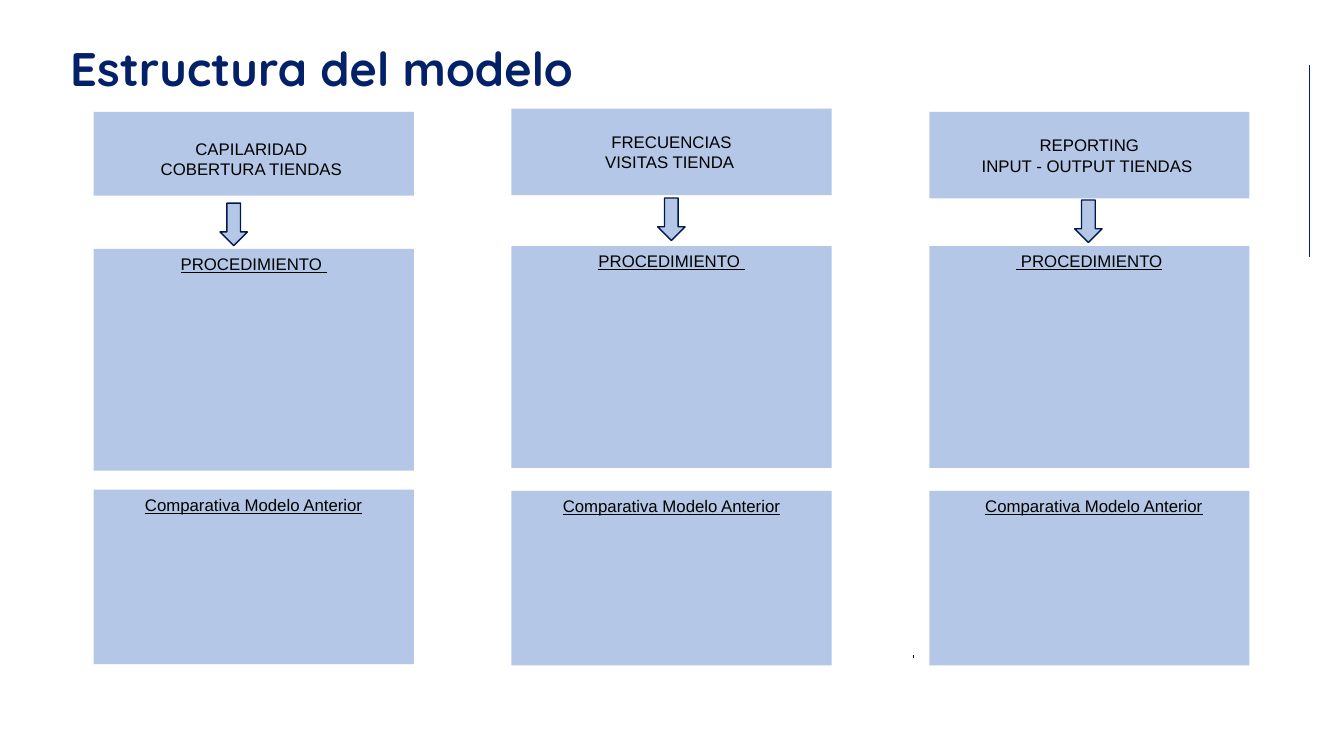
from lxml import etree
from pptx import Presentation
from pptx.dml.color import RGBColor
from pptx.enum.shapes import MSO_CONNECTOR, MSO_SHAPE
from pptx.enum.text import MSO_ANCHOR, PP_ALIGN
from pptx.oxml.ns import qn
from pptx.util import Cm, Pt

RECTANGLE, DOWN_ARROW = MSO_SHAPE.RECTANGLE, MSO_SHAPE.DOWN_ARROW
STRAIGHT = MSO_CONNECTOR.STRAIGHT
TOP, MIDDLE = MSO_ANCHOR.TOP, MSO_ANCHOR.MIDDLE
LEFT, CENTER = PP_ALIGN.LEFT, PP_ALIGN.CENTER

COLORS = {"panel": "B4C7E7", "title": "022169", "outline": "01184E", "text": "000000"}
TITLE = "Estructura del modelo"
COMPARISON = "Comparativa Modelo Anterior"
COLUMNS = [
    {"heading": ["CAPILARIDAD ", "COBERTURA TIENDAS "], "procedure": "PROCEDIMIENTO ",
     "tops": (2.82, 6.27, 12.34), "heading_height": 2.11, "heading_inset": 0.36,
     "comparison_inset": 0.25, "arrow": (5.89, 5.12)},
    {"heading": ["FRECUENCIAS", "VISITAS TIENDA "], "procedure": "PROCEDIMIENTO ",
     "tops": (2.74, 6.2, 12.37), "heading_height": 2.18, "heading_inset": 0.13,
     "comparison_inset": 0.25, "arrow": (16.92, 4.99)},
    {"heading": ["REPORTING", "INPUT - OUTPUT TIENDAS "], "procedure": " PROCEDIMIENTO",
     "tops": (2.82, 6.2, 12.37), "heading_height": 2.18, "heading_inset": 0.13,
     "comparison_inset": 0.48, "arrow": (27.43, 5.04)},
]
RULES = [(32.99, 1.65, 6.48, "title", 0.5), (23.01, 16.51, 16.59, "text", 0.75)]
FIRST_LEFT, COLUMN_STEP, PANEL_WIDTH = 2.36, 10.53, 8.07
PROCEDURE_HEIGHT, COMPARISON_HEIGHT = 5.59, 4.4
ARROW_WIDTH, ARROW_HEIGHT = 0.69, 1.07


def color(name):
    return RGBColor.from_string(COLORS[name])


def write_text(shape, lines, size=12, font="Arial", ink="text", bold=False, underline=False,
               align=CENTER, anchor=TOP, spacing=1.0, left_inset=0.25, top_inset=0.13):
    frame = shape.text_frame
    frame.word_wrap = True
    frame.vertical_anchor = anchor
    frame.margin_left, frame.margin_top = Cm(left_inset), Cm(top_inset)
    for index, line in enumerate(lines):
        paragraph = frame.paragraphs[0] if index == 0 else frame.add_paragraph()
        paragraph.alignment, paragraph.line_spacing = align, spacing
        run = paragraph.add_run()
        run.text = line
        run.font.name, run.font.size = font, Pt(size)
        run.font.bold, run.font.underline = bold, underline
        run.font.color.rgb = color(ink)


def add_filled(slide, kind, left, top, width, height):
    shape = slide.shapes.add_shape(kind, Cm(left), Cm(top), Cm(width), Cm(height))
    shape.shadow.inherit = False
    shape.fill.solid()
    shape.fill.fore_color.rgb = color("panel")
    shape.line.fill.background()
    return shape


def add_rule(slide, x, top, bottom, ink, weight):
    rule = slide.shapes.add_connector(STRAIGHT, Cm(x), Cm(top), Cm(x), Cm(bottom))
    rule.line.color.rgb = color(ink)
    rule.line.width = Pt(weight)
    etree.SubElement(rule._element.spPr, qn("a:effectLst"))


def add_column(slide, left, column):
    heading_top, procedure_top, comparison_top = column["tops"]
    heading = add_filled(slide, RECTANGLE, left, heading_top, PANEL_WIDTH, column["heading_height"])
    write_text(heading, column["heading"], anchor=MIDDLE, top_inset=column["heading_inset"])
    procedure = add_filled(slide, RECTANGLE, left, procedure_top, PANEL_WIDTH, PROCEDURE_HEIGHT)
    write_text(procedure, [column["procedure"]], underline=True)
    comparison = add_filled(slide, RECTANGLE, left, comparison_top, PANEL_WIDTH, COMPARISON_HEIGHT)
    write_text(comparison, [COMPARISON], underline=True, left_inset=column["comparison_inset"])
    center, top = column["arrow"]
    arrow = add_filled(slide, DOWN_ARROW, center - ARROW_WIDTH / 2, top, ARROW_WIDTH, ARROW_HEIGHT)
    arrow.line.color.rgb = color("outline")
    arrow.line.width = Pt(1)


def main():
    """Build the slide with three model columns and save it."""
    presentation = Presentation()
    presentation.slide_width, presentation.slide_height = Cm(33.87), Cm(19.05)
    slide = presentation.slides.add_slide(presentation.slide_layouts[6])
    for rule in RULES:
        add_rule(slide, *rule)
    for index, column in enumerate(COLUMNS):
        add_column(slide, FIRST_LEFT + index * COLUMN_STEP, column)
    title = slide.shapes.add_textbox(Cm(1.52), Cm(0.15), Cm(14.99), Cm(2.46))
    write_text(title, [TITLE], size=33.6, font="Quicksand", ink="title", bold=True,
               align=LEFT, spacing=1.5)
    presentation.save("out.pptx")


if __name__ == "__main__":
    main()
